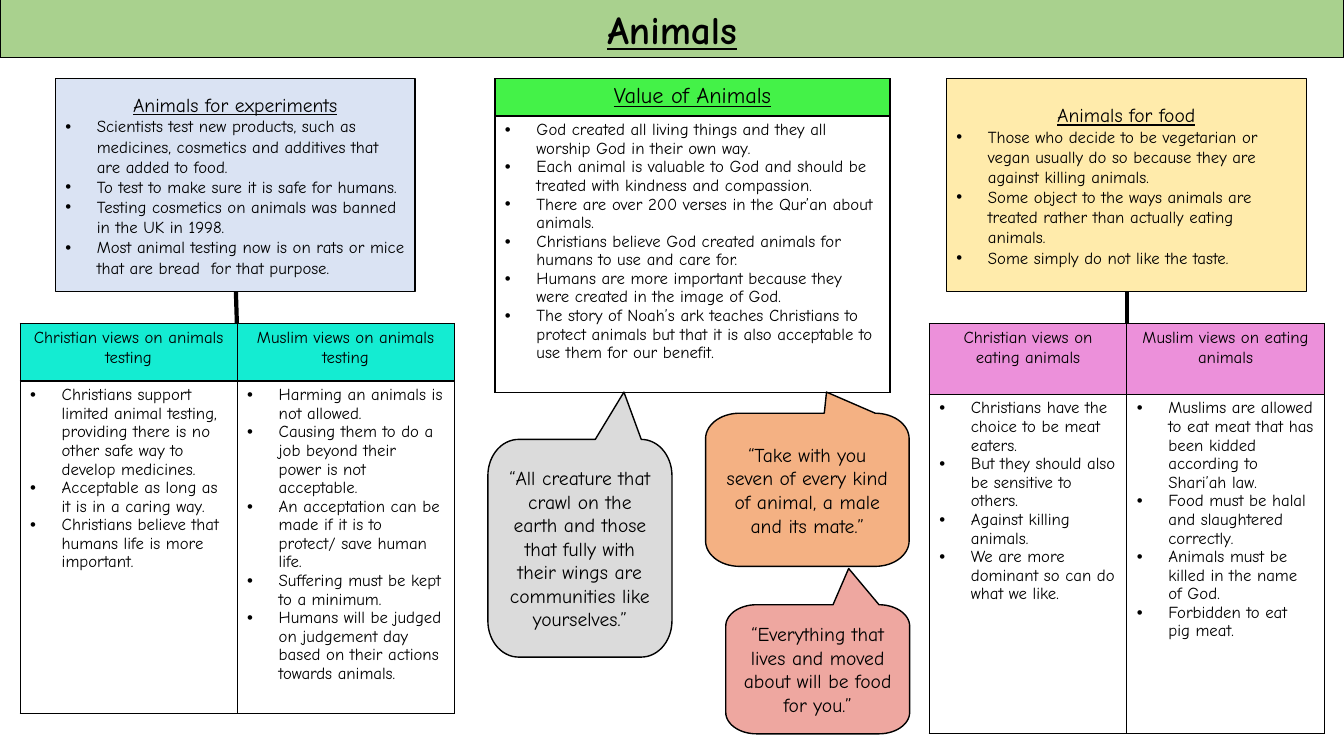
import math

from lxml import etree
from pptx import Presentation
from pptx import util as u
from pptx.dml import color
from pptx.enum import shapes, text
from pptx.oxml import ns

COLORS = {
    "ink": "000000", "paper": "FFFFFF", "title": "A9D18E",
    "experiments": "DAE3F3", "testing": "14ECD2", "food": "FFEBAB",
    "eating": "EC90DA", "value": "44F248", "male": "F4B183",
    "moving": "EEA7A0", "creature": "DBDBDB",
}


class Board:
    """Draws the elements of one revision slide in a shared style."""

    font = "Comic Neue"
    indent = u.Pt(22.5)

    def __init__(self, deck):
        self.slide = deck.slides.add_slide(deck.slide_layouts[6])

    def rgb(self, name):
        return color.RGBColor.from_string(COLORS[name])

    def paint(self, shape, fill, width=1):
        shape.shadow.inherit = False
        shape.fill.solid()
        shape.fill.fore_color.rgb = self.rgb(fill)
        shape.line.color.rgb = self.rgb("ink")
        shape.line.width = u.Pt(width)
        shape.text_frame.word_wrap = True
        shape.text_frame.vertical_anchor = text.MSO_ANCHOR.MIDDLE

    def label(self, para, words, size=12, underline=False, bold=False):
        para.alignment = text.PP_ALIGN.CENTER
        span = para.add_run()
        span.text = words
        span.font.name = self.font
        span.font.size = u.Pt(size)
        span.font.bold = bold
        span.font.underline = underline
        span.font.color.rgb = self.rgb("ink")

    def bullet(self, para, words, spacing=None):
        self.label(para, words)
        para.alignment = text.PP_ALIGN.LEFT
        if spacing:
            para.line_spacing = spacing
        props = para._p.get_or_add_pPr()
        props.set("marL", str(self.indent))
        props.set("indent", str(-self.indent))
        etree.SubElement(props, ns.qn("a:buFont"), typeface="Arial")
        etree.SubElement(props, ns.qn("a:buChar"), char="•")

    def box(self, place, fill, heading, points=(), size=14, bold=False, width=1):
        box = self.slide.shapes.add_shape(shapes.MSO_SHAPE.RECTANGLE, *map(u.Pt, place))
        self.paint(box, fill, width)
        self.label(box.text_frame.paragraphs[0], heading, size, True, bold)
        for point in points:
            self.bullet(box.text_frame.add_paragraph(), point)

    def border(self, cell):
        props = cell._tc.get_or_add_tcPr()
        for index, side in enumerate(("lnL", "lnR", "lnT", "lnB")):
            line = etree.Element(ns.qn("a:" + side), w=str(u.Pt(1)))
            fill = etree.SubElement(line, ns.qn("a:solidFill"))
            etree.SubElement(fill, ns.qn("a:srgbClr"), val=COLORS["ink"])
            props.insert(index, line)

    def table(self, left, top, column, heights, fill, columns, size=12, underline=False):
        frame = self.slide.shapes.add_table(
            2, len(columns), u.Pt(left), u.Pt(top),
            u.Pt(column * len(columns)), u.Pt(sum(heights)))
        table = frame.table
        table.first_row = table.horz_banding = False
        for row, height in zip(table.rows, heights):
            row.height = u.Pt(height)
        for index, (heading, points) in enumerate(columns):
            table.columns[index].width = u.Pt(column)
            head, body = table.cell(0, index), table.cell(1, index)
            for cell, shade in ((head, fill), (body, "paper")):
                cell.fill.solid()
                cell.fill.fore_color.rgb = self.rgb(shade)
                self.border(cell)
            self.label(head.text_frame.paragraphs[0], heading, size, underline)
            for number, point in enumerate(points):
                para = body.text_frame.add_paragraph() if number else body.text_frame.paragraphs[0]
                self.bullet(para, point, 0.96)

    def link(self, start, end):
        line = self.slide.shapes.add_connector(
            shapes.MSO_CONNECTOR.STRAIGHT, *map(u.Pt, start + end))
        line.line.color.rgb = self.rgb("ink")
        line.line.width = u.Pt(3)
        etree.SubElement(line._element.spPr, ns.qn("a:effectLst"))

    def callout(self, place, tip, fill, quote):
        left, top, width, height = place
        rx, ry = width / 6, height / 6
        right, bottom = left + width - rx, top + height - ry
        corners = ((left + rx, top + ry, 180), (right, top + ry, 270),
                   (right, bottom, 0), (left + rx, bottom, 90))
        outline = []
        for x, y, start in corners:
            if start == 270:
                outline += [(left + width * 7 / 12, top), tip]
            for step in range(0, 91, 6):
                angle = math.radians(start + step)
                outline.append((x + rx * math.cos(angle), y + ry * math.sin(angle)))
        outline = [(u.Pt(x), u.Pt(y)) for x, y in outline]
        builder = self.slide.shapes.build_freeform(*outline[0])
        builder.add_line_segments(outline[1:])
        bubble = builder.convert_to_shape()
        self.paint(bubble, fill)
        frame = bubble.text_frame
        frame.margin_left = frame.margin_right = u.Pt(12)
        frame.margin_top = u.Pt(top - tip[1] + 3.6)
        self.label(frame.paragraphs[0], quote, 14)


def main():
    deck = Presentation()
    deck.slide_width, deck.slide_height = u.Pt(960), u.Pt(540)
    board = Board(deck)
    board.box((0, 0, 960, 41), "title", "Animals", size=28, bold=True, width=0.75)

    board.box((39.6, 56.2, 257, 152), "experiments", "Animals for experiments", (
        "Scientists test new products, such as medicines, cosmetics and additives that are added to food.",
        "To test to make sure it is safe for humans.",
        "Testing cosmetics on animals was banned in the UK in 1998.",
        "Most animal testing now is on rats or mice that are bread  for that purpose."))
    board.table(14.4, 231.1, 155, (41, 237.6), "testing", (
        ("Christian views on animals testing", (
            "Christians support limited animal testing, providing there is no other safe way to develop medicines.",
            "Acceptable as long as it is in a caring way.",
            "Christians believe that humans life is more important.")),
        ("Muslim views on animals testing", (
            "Harming an animals is not allowed.",
            "Causing them to do a job beyond their power is not acceptable.",
            "An acceptation can be made if it is to protect/ save human life.",
            "Suffering must be kept to a minimum.",
            "Humans will be judged on judgement day based on their actions towards animals."))))
    board.link((169.2, 231.1), (168.5, 208.2))

    board.box((676.1, 56.2, 257, 152), "food", "Animals for food", (
        "Those who decide to be vegetarian or vegan usually do so because they are against killing animals.",
        "Some object to the ways animals are treated rather than actually eating animals.",
        "Some simply do not like the taste."))
    board.table(663.8, 231.1, 141.1, (50.4, 242.6), "eating", (
        ("Christian views on eating animals", (
            "Christians have the choice to be meat eaters.",
            "But they should also be sensitive to others.",
            "Against killing animals.",
            "We are more dominant so can do what we like.")),
        ("Muslim views on eating animals", (
            "Muslims are allowed to eat meat that has been kidded according to Shari’ah law.",
            "Food must be halal and slaughtered correctly.",
            "Animals must be killed in the name of God.",
            "Forbidden to eat pig meat."))))
    board.link((805, 231.1), (805, 208.2))

    board.table(353.5, 56.2, 282.2, (26.6, 197.3), "value", (
        ("Value of Animals", (
            "God created all living things and they all worship God in their own way.",
            "Each animal is valuable to God and should be treated with kindness and compassion.",
            "There are over 200 verses in the Qur’an about animals.",
            "Christians believe God created animals for humans to use and care for.",
            "Humans are more important because they were created in the image of God.",
            "The story of Noah’s ark teaches Christians to protect animals but that it is also "
            "acceptable to use them for our benefit.")),), 16, True)

    board.callout((504, 295.2, 145.4, 109.4), (590.4, 280.1), "male",
                  "“Take with you seven of every kind of animal, a male and its mate.”")
    board.callout((518.4, 432, 131.4, 92.2), (606.2, 406.1), "moving",
                  "“Everything that lives and moved about will be food for you.”")
    board.callout((348.5, 313.9, 131.5, 155.5), (445.7, 280.1), "creature",
                  "“All creature that crawl on the earth and those that fully with their wings "
                  "are communities like yourselves.”")
    deck.save("out.pptx")


if __name__ == "__main__":
    main()
